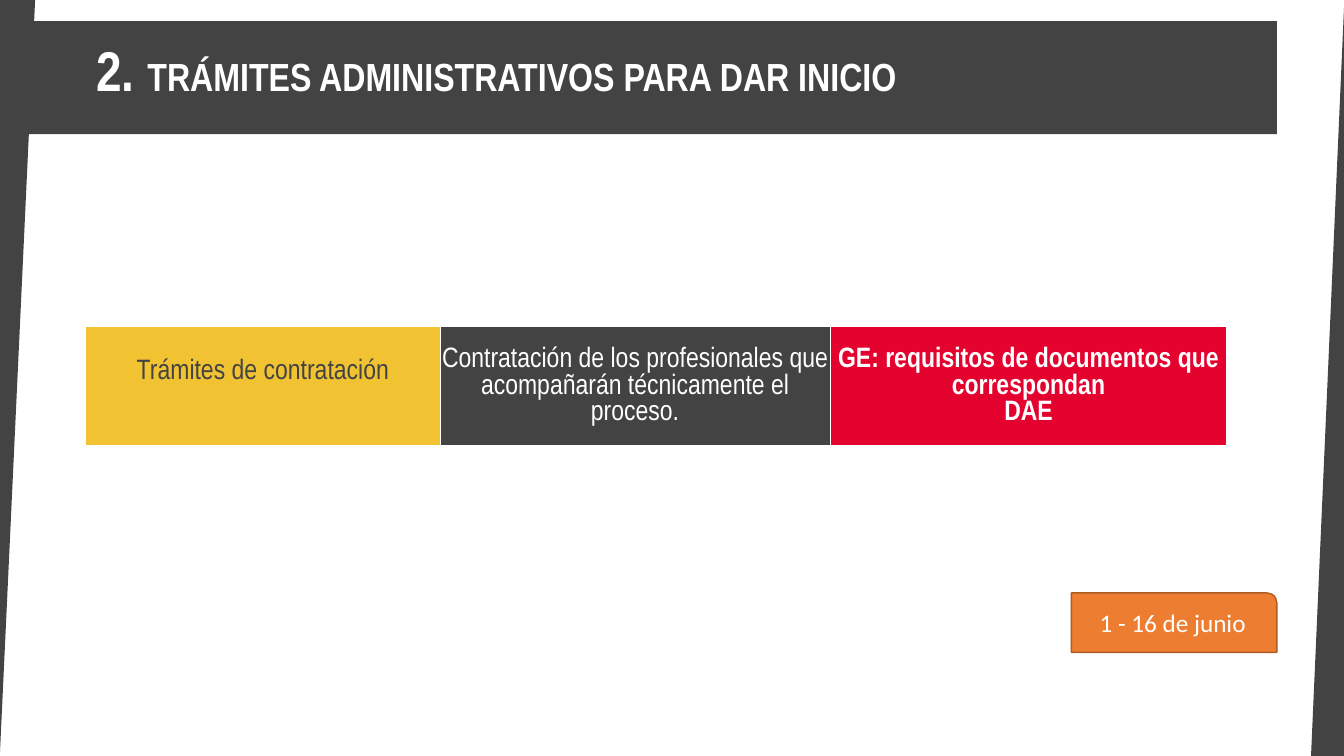
from dataclasses import dataclass

from lxml import etree
from pptx import Presentation
from pptx.dml.color import RGBColor
from pptx.enum.shapes import MSO_SHAPE
from pptx.enum.text import MSO_ANCHOR, PP_ALIGN
from pptx.oxml.ns import qn
from pptx.slide import Slide
from pptx.table import _Cell
from pptx.util import Cm, Pt

MIDDLE = MSO_ANCHOR.MIDDLE
CENTER, LEFT = PP_ALIGN.CENTER, PP_ALIGN.LEFT
TRIANGLE, DATE_TAB = MSO_SHAPE.RIGHT_TRIANGLE, MSO_SHAPE.ROUND_1_RECTANGLE
NARROW = "Arial Narrow"
DARK, WHITE, YELLOW, RED = "434343", "FFFFFF", "F1C232", "E4032E"
ORANGE, BROWN = "ED7D31", "AF5C24"
SLIDE_WIDTH, SLIDE_HEIGHT = 33.87, 19.05


@dataclass
class Step:
    """A cell of the process table."""
    lines: list[str]
    width: float
    fill: str
    color: str = WHITE
    bold: bool = False
    bottom: float = 0


@dataclass
class Wedge:
    """A dark triangle along a side edge of the slide."""
    center: float
    thickness: float
    rotation: int


STEPS = [
    Step(["Trámites de contratación"], 8.93, YELLOW, DARK, bottom=0.75),
    Step(["Contratación de los profesionales que acompañarán técnicamente el proceso."],
         9.83, DARK),
    Step(["GE: requisitos de documentos que correspondan", "DAE"], 10, RED, bold=True),
]
WEDGES = [Wedge(0.44, 0.89, 90), Wedge(33.46, 0.84, 270)]


def paint(target, color: str) -> None:
    """Fill a shape, cell, line or font with a solid colour."""
    fill = target.fill
    fill.solid()
    fill.fore_color.rgb = RGBColor.from_string(color)


def style(paragraph, name: str, size: float, color: str, bold: bool = False,
          alignment=CENTER) -> None:
    """Set the alignment and font of a paragraph."""
    paragraph.alignment = alignment
    paragraph.font.name = name
    paragraph.font.size = Pt(size)
    paragraph.font.bold = bold
    paint(paragraph.font, color)


def add_title(slide: Slide) -> None:
    """Format the title as a dark banner."""
    title = slide.shapes.title
    title.left, title.top, title.width, title.height = Cm(0.43), Cm(0.53), Cm(31.75), Cm(2.85)
    paint(title, DARK)
    frame = title.text_frame
    frame.word_wrap = True
    frame.vertical_anchor = MIDDLE
    frame.margin_left, frame.margin_right = Cm(2), Cm(0.25)
    frame.margin_top, frame.margin_bottom = Cm(0.13), Cm(0.58)
    paragraph = frame.paragraphs[0]
    style(paragraph, NARROW, 28, WHITE, True, LEFT)
    number = paragraph.add_run()
    number.text = "2. "
    number.font.size = Pt(40)
    paragraph.add_run().text = "TRÁMITES ADMINISTRATIVOS PARA DAR INICIO"


def add_wedge(slide: Slide, wedge: Wedge) -> None:
    """Draw a triangle turned to run the height of the slide."""
    shape = slide.shapes.add_shape(
        TRIANGLE, Cm(wedge.center - SLIDE_HEIGHT / 2),
        Cm((SLIDE_HEIGHT - wedge.thickness) / 2), Cm(SLIDE_HEIGHT), Cm(wedge.thickness))
    shape.rotation = wedge.rotation
    shape.shadow.inherit = False
    paint(shape, DARK)
    shape.line.fill.background()


def add_borders(cell: _Cell) -> None:
    """Give a cell thin white borders."""
    properties = cell._tc.get_or_add_tcPr()
    for index, (side, width) in enumerate(
            {"a:lnL": 0.75, "a:lnR": 0.75, "a:lnT": 1, "a:lnB": 0.75}.items()):
        line = etree.Element(qn(side), w=str(Pt(width)))
        fill = etree.SubElement(line, qn("a:solidFill"))
        etree.SubElement(fill, qn("a:srgbClr"), val=WHITE)
        properties.insert(index, line)


def add_steps(slide: Slide) -> None:
    """Draw the process steps as a one-row table."""
    total = sum(step.width for step in STEPS)
    table = slide.shapes.add_table(
        1, len(STEPS), Cm(2.16), Cm(8.23), Cm(total), Cm(3)).table
    table.first_row = table.horz_banding = False
    for column, step in enumerate(STEPS):
        table.columns[column].width = Cm(step.width)
        cell = table.cell(0, column)
        paint(cell, step.fill)
        add_borders(cell)
        cell.vertical_anchor = MIDDLE
        cell.margin_left = cell.margin_right = cell.margin_top = Cm(0.03)
        cell.margin_bottom = Cm(step.bottom)
        cell.text = "\n".join(step.lines)
        for paragraph in cell.text_frame.paragraphs:
            style(paragraph, NARROW, 20, step.color, step.bold)


def add_date(slide: Slide) -> None:
    """Draw the orange tab with the dates."""
    tab = slide.shapes.add_shape(DATE_TAB, Cm(27), Cm(14.94), Cm(5.18), Cm(1.5))
    tab.shadow.inherit = False
    paint(tab, ORANGE)
    paint(tab.line, BROWN)
    tab.line.width = Pt(1)
    frame = tab.text_frame
    frame.text = "1 - 16 de junio"
    frame.vertical_anchor = MIDDLE
    style(frame.paragraphs[0], "Calibri", 18, WHITE)


def main() -> None:
    """Build and save the slide."""
    presentation = Presentation()
    presentation.slide_width, presentation.slide_height = Cm(SLIDE_WIDTH), Cm(SLIDE_HEIGHT)
    slide = presentation.slides.add_slide(presentation.slide_layouts[5])
    add_title(slide)
    for wedge in WEDGES:
        add_wedge(slide, wedge)
    add_steps(slide)
    add_date(slide)
    presentation.save("out.pptx")


if __name__ == "__main__":
    main()
